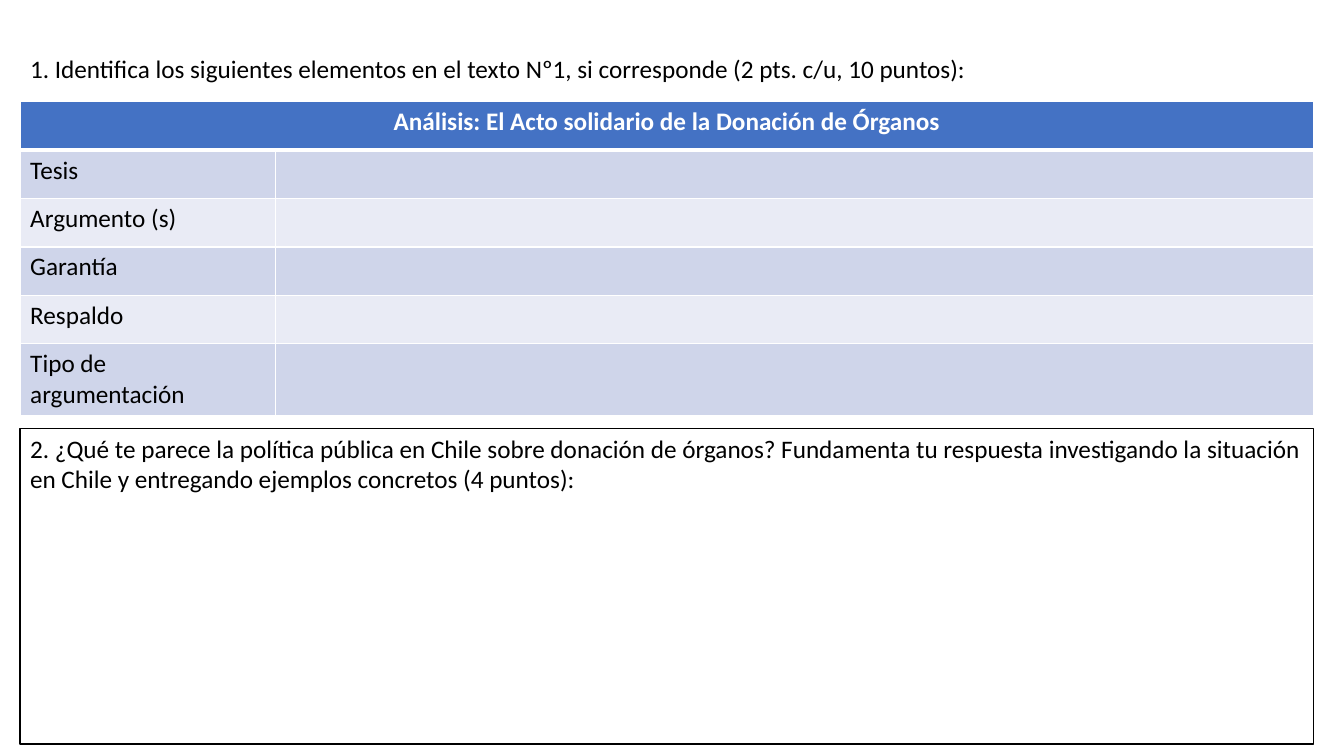
"""Build the worksheet slide on analysing an argumentative text about organ donation."""
from dataclasses import dataclass

from lxml import etree
from pptx import Presentation
from pptx import util as u
from pptx.dml.color import RGBColor
from pptx.enum import shapes, text
from pptx.oxml.ns import qn


@dataclass(frozen=True)
class Theme:
    font: str = "Calibri"
    size: int = 18
    black: str = "000000"
    white: str = "FFFFFF"
    header: str = "4472C4"
    bands: tuple = ("CFD5EA", "E9EBF5")


theme = Theme()
PX = 9144
LEFT, WIDTH = 20, 1283
LABEL_WIDTH, ROW_HEIGHT, LAST_HEIGHT = 253, 48, 71
TITLE = "Análisis: El Acto solidario de la Donación de Órganos"
ELEMENTS = ["Tesis", "Argumento (s)", "Garantía", "Respaldo", "Tipo de argumentación"]
QUESTION_1 = ("1. Identifica los siguientes elementos en el texto Nº1, "
              "si corresponde (2 pts. c/u, 10 puntos):")
QUESTION_2 = ("2. ¿Qué te parece la política pública en Chile sobre donación de órganos? "
              "Fundamenta tu respuesta investigando la situación en Chile "
              "y entregando ejemplos concretos (4 puntos):")


def write(frame, words, color, bold=False, align=text.PP_ALIGN.LEFT):
    frame.text = words
    frame.word_wrap = True
    para = frame.paragraphs[0]
    para.alignment = align
    para.font.size = u.Pt(theme.size)
    for span in para.runs:
        span.font.name = theme.font
        span.font.size = u.Pt(theme.size)
        span.font.bold = bold
        span.font.color.rgb = RGBColor.from_string(color)


def paint(cell, color, bottom):
    props = cell._tc.get_or_add_tcPr()
    for side, points in (("L", 1), ("R", 1), ("T", 1), ("B", bottom)):
        line = etree.SubElement(props, qn(f"a:ln{side}"), w=str(u.Pt(points)))
        solid = etree.SubElement(line, qn("a:solidFill"))
        etree.SubElement(solid, qn("a:srgbClr"), val=theme.white)
    cell.fill.solid()
    cell.fill.fore_color.rgb = RGBColor.from_string(color)


deck = Presentation()
deck.slide_width, deck.slide_height = 1333 * PX, 750 * PX
page = deck.slides.add_slide(deck.slide_layouts[6])

row_heights = [ROW_HEIGHT] * len(ELEMENTS) + [LAST_HEIGHT]
grid = page.shapes.add_table(len(row_heights), 2, LEFT * PX, 101 * PX,
                             WIDTH * PX, sum(row_heights) * PX).table
for column, width in zip(grid.columns, (LABEL_WIDTH, WIDTH - LABEL_WIDTH)):
    column.width = width * PX
for row, height in zip(grid.rows, row_heights):
    row.height = height * PX

grid.cell(0, 0).merge(grid.cell(0, 1))
write(grid.cell(0, 0).text_frame, TITLE, theme.white, True, text.PP_ALIGN.CENTER)
for cell in grid.rows[0].cells:
    paint(cell, theme.header, 3)
for index, element in enumerate(ELEMENTS):
    for cell, words in zip(grid.rows[index + 1].cells, (element, "")):
        write(cell.text_frame, words, theme.black)
        paint(cell, theme.bands[index % 2], 1)

first_question = page.shapes.add_textbox(LEFT * PX, 48 * PX, 1056 * PX, 40 * PX)
write(first_question.text_frame, QUESTION_1, theme.black)

answer_box = page.shapes.add_shape(shapes.MSO_SHAPE.RECTANGLE, LEFT * PX, 425 * PX,
                                   WIDTH * PX, 313 * PX)
answer_box.shadow.inherit = False
answer_box.fill.solid()
answer_box.fill.fore_color.rgb = RGBColor.from_string(theme.white)
answer_box.line.color.rgb = RGBColor.from_string(theme.black)
answer_box.line.width = u.Pt(1)
answer_box.text_frame.vertical_anchor = text.MSO_ANCHOR.TOP
write(answer_box.text_frame, QUESTION_2, theme.black)

deck.save("out.pptx")
